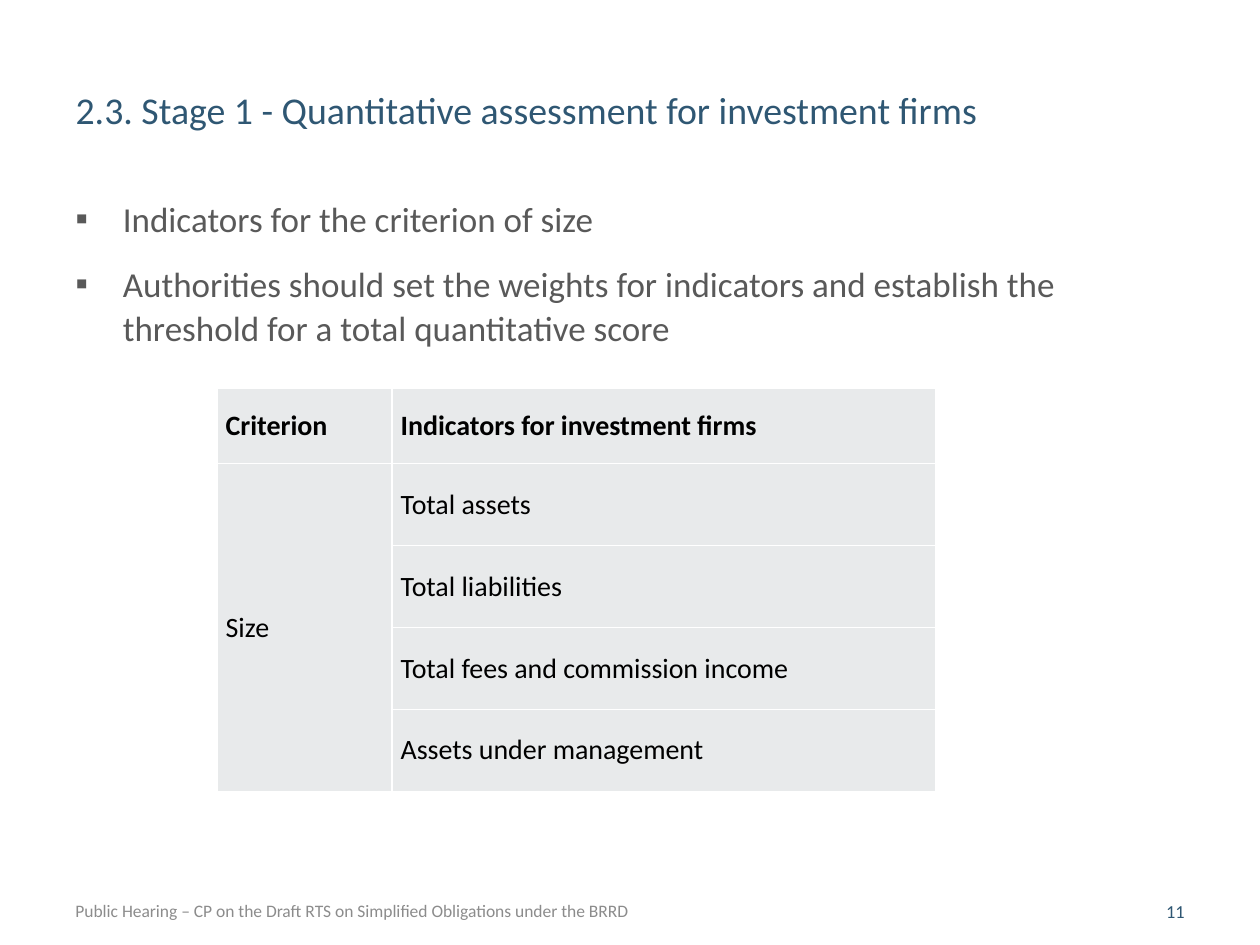
from lxml.etree import SubElement
from pptx import Presentation
from pptx.dml.color import RGBColor
from pptx.enum.text import MSO_ANCHOR, MSO_AUTO_SIZE, PP_ALIGN
from pptx.oxml.ns import qn
from pptx.util import Pt

TITLE = "2.3. Stage 1 - Quantitative assessment for investment firms"
BULLETS = [
    "Indicators for the criterion of size",
    "Authorities should set the weights for indicators and establish the "
    "threshold for a total quantitative score",
]
HEADER = ["Criterion", "Indicators for investment firms"]
CRITERION = "Size"
INDICATORS = [
    "Total assets",
    "Total liabilities",
    "Total fees and commission income",
    "Assets under management",
]
FOOTER = "Public Hearing – CP on the Draft RTS on Simplified Obligations under the BRRD"
PAGE_NUMBER = "11"

NAVY, GREY, PALE_GREY = "2F5773", "595959", "8C8C8C"
BLACK, WHITE, CELL_FILL = "000000", "FFFFFF", "E8EAEB"
LEFT = 36
COLUMN_WIDTHS = [100, 311]
HEADER_HEIGHT, ROW_HEIGHT = 43, 46.8


def color(value):
    return RGBColor.from_string(value)


def place(shape, left, top, width, height):
    shape.left, shape.top = Pt(left), Pt(top)
    shape.width, shape.height = Pt(width), Pt(height)


def add_bullet(para, indent):
    properties = para._p.get_or_add_pPr()
    properties.set("marL", str(Pt(indent)))
    properties.set("indent", str(-Pt(indent)))
    SubElement(properties, qn("a:buFont"), typeface="Calibri")
    SubElement(properties, qn("a:buChar"), char="▪")


def write(frame, *texts, size, ink, bold=False, align=PP_ALIGN.LEFT,
          anchor=MSO_ANCHOR.TOP, bullet_indent=0, gap=0, spacing=1.0):
    frame.word_wrap = True
    frame.vertical_anchor = anchor
    for index, text in enumerate(texts):
        para = frame.add_paragraph() if index else frame.paragraphs[0]
        para.alignment = align
        para.line_spacing = spacing
        para.space_before = Pt(gap if index else 0)
        if bullet_indent:
            add_bullet(para, bullet_indent)
        span = para.add_run()
        span.text = text
        span.font.name, span.font.size, span.font.bold = "Calibri", Pt(size), bold
        span.font.color.rgb = color(ink)


def format_cell(cell):
    cell.margin_left = cell.margin_right = Pt(5)
    cell.margin_top = cell.margin_bottom = Pt(0)
    cell.vertical_anchor = MSO_ANCHOR.MIDDLE
    properties = cell._tc.get_or_add_tcPr()
    for side in ("a:lnL", "a:lnR", "a:lnT", "a:lnB"):
        line = SubElement(properties, qn(side), w=str(Pt(1)))
        SubElement(SubElement(line, qn("a:solidFill")), qn("a:srgbClr"), val=WHITE)
    cell.fill.solid()
    cell.fill.fore_color.rgb = color(CELL_FILL)


def add_indicator_table(page):
    rows = [HEADER] + [[CRITERION if i == 0 else "", name]
                       for i, name in enumerate(INDICATORS)]
    heights = [HEADER_HEIGHT] + [ROW_HEIGHT] * len(INDICATORS)
    table = page.shapes.add_table(
        len(rows), len(HEADER), Pt(124), Pt(222),
        Pt(sum(COLUMN_WIDTHS)), Pt(sum(heights))).table
    table.first_row = table.horz_banding = False
    for column, width in zip(table.columns, COLUMN_WIDTHS):
        column.width = Pt(width)
    for r, (texts, height) in enumerate(zip(rows, heights)):
        table.rows[r].height = Pt(height)
        for c, text in enumerate(texts):
            cell = table.cell(r, c)
            format_cell(cell)
            if text:
                write(cell.text_frame, text, size=16, ink=BLACK, bold=r == 0,
                      anchor=MSO_ANCHOR.MIDDLE)
    table.cell(1, 0).merge(table.cell(len(INDICATORS), 0))


def add_label(page, text, left, width, **style):
    box = page.shapes.add_textbox(Pt(left), Pt(512), Pt(width), Pt(17))
    write(box.text_frame, text, anchor=MSO_ANCHOR.MIDDLE, **style)


def main():
    """Build the slide on investment firm indicators and save it."""
    deck = Presentation()
    deck.slide_width, deck.slide_height = Pt(720), Pt(540)
    page = deck.slides.add_slide(deck.slide_layouts[1])
    title, body = page.shapes.title, page.placeholders[1]
    place(title, LEFT, 46, 587, 44)
    place(body, LEFT, 108, 648, 386)
    for shape in (title, body):
        shape.text_frame.auto_size = MSO_AUTO_SIZE.NONE
    write(title.text_frame, TITLE, size=21.6, ink=NAVY)
    write(body.text_frame, *BULLETS, size=20, ink=GREY,
          bullet_indent=27, gap=12, spacing=1.05)
    add_indicator_table(page)
    add_label(page, FOOTER, LEFT, 387, size=10, ink=PALE_GREY)
    add_label(page, PAGE_NUMBER, 623, 61, size=10.5, ink=NAVY, align=PP_ALIGN.RIGHT)
    deck.save("out.pptx")


if __name__ == "__main__":
    main()
